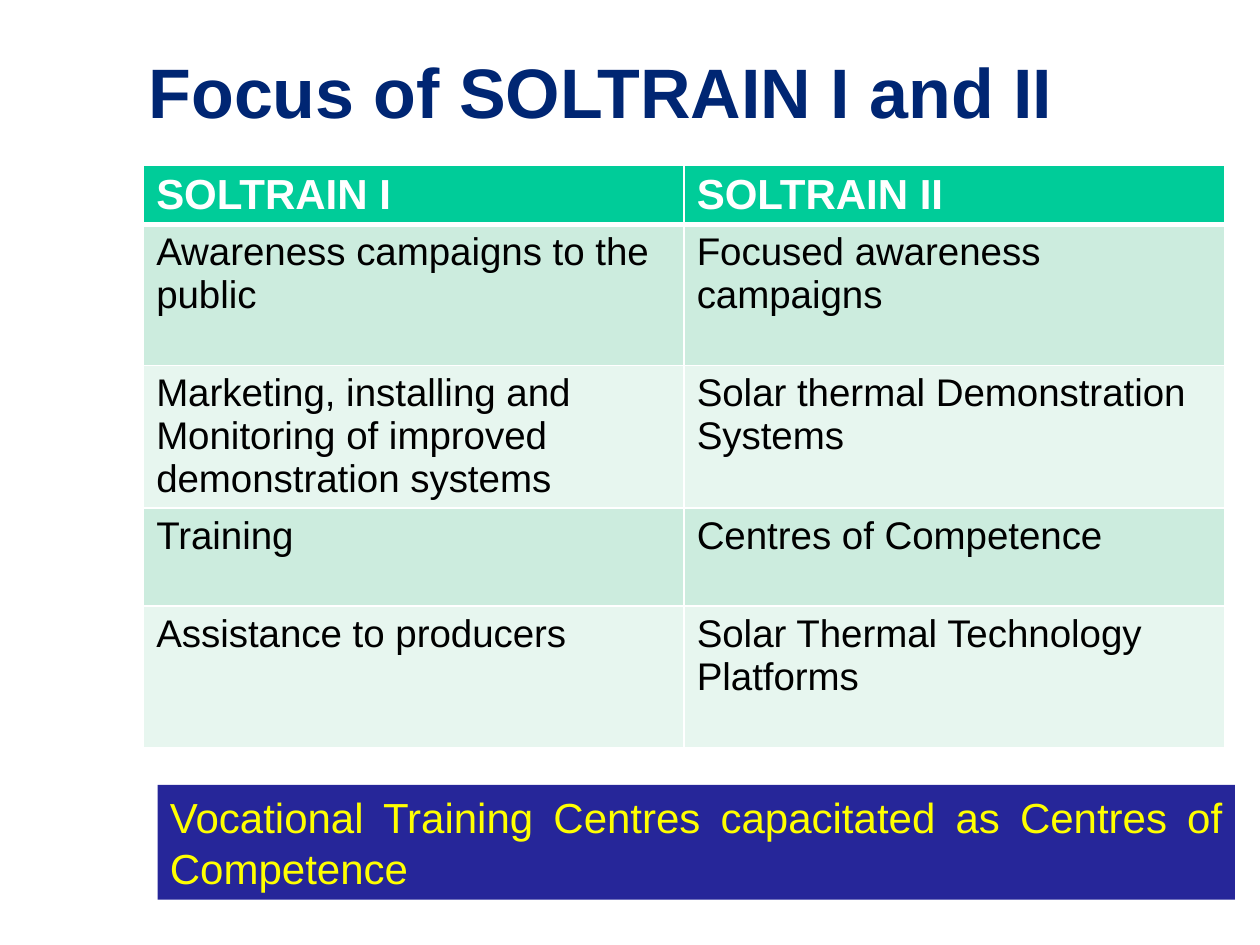
from dataclasses import dataclass

from lxml.etree import SubElement
from pptx import Presentation
from pptx.dml.color import RGBColor
from pptx.enum.shapes import MSO_SHAPE
from pptx.enum.text import MSO_ANCHOR, PP_ALIGN
from pptx.oxml.ns import qn
from pptx.util import Inches, Pt


@dataclass(frozen=True)
class Theme:
    face: str = "Arial"
    navy: str = "002673"
    head: str = "00CC99"
    bands: tuple = ("CCECDE", "E7F6EF")
    white: str = "FFFFFF"
    black: str = "000000"
    box: str = "262699"
    yellow: str = "FFFF00"
    title_size: int = 40
    head_size: int = 24
    body_size: int = 22


theme = Theme()


def write(frame, text, size, color, bold=False, align=PP_ALIGN.LEFT):
    frame.text = text
    frame.word_wrap = True
    para = frame.paragraphs[0]
    para.alignment = align
    font = para.runs[0].font
    font.name = theme.face
    font.size = Pt(size)
    font.bold = bold
    font.color.rgb = RGBColor.from_string(color)


def paint(cell, color, base):
    """Fill a cell and rule its four sides, the bottom one base points wide."""
    props = cell._tc.get_or_add_tcPr()
    for side, width in (("L", 1), ("R", 1), ("T", 1), ("B", base)):
        line = SubElement(props, qn(f"a:ln{side}"), w=str(Pt(width)))
        fill = SubElement(line, qn("a:solidFill"))
        SubElement(fill, qn("a:srgbClr"), val=theme.white)
    cell.fill.solid()
    cell.fill.fore_color.rgb = RGBColor.from_string(color)


deck = Presentation()
deck.slide_width = Inches(10)
deck.slide_height = Inches(7.5)
slide = deck.slides.add_slide(deck.slide_layouts[5])

# Title
title = slide.shapes.title
title.left, title.top = Inches(1.08), Inches(0.28)
title.width, title.height = Inches(8.5), Inches(0.87)
title.text_frame.vertical_anchor = MSO_ANCHOR.MIDDLE
write(title.text_frame, "Focus of SOLTRAIN I and II",
      theme.title_size, theme.navy, bold=True)

# Comparison of the two phases
rows = [
    (0.46, "SOLTRAIN I", "SOLTRAIN II"),
    (1.12, "Awareness campaigns to the public", "Focused awareness campaigns"),
    (1.13, "Marketing, installing and Monitoring of improved demonstration systems",
     "Solar thermal Demonstration Systems"),
    (0.78, "Training", "Centres of Competence"),
    (1.12, "Assistance to producers", "Solar Thermal Technology Platforms"),
]
total = sum(row[0] for row in rows)
table = slide.shapes.add_table(len(rows), 2, Inches(1.14), Inches(1.31),
                               Inches(8.58), Inches(total)).table
for r, (height, *texts) in enumerate(rows):
    table.rows[r].height = Inches(height)
    for c, text in enumerate(texts):
        cell = table.cell(r, c)
        if r == 0:
            paint(cell, theme.head, 3)
            write(cell.text_frame, text, theme.head_size, theme.white, bold=True)
        else:
            paint(cell, theme.bands[(r - 1) % 2], 1)
            write(cell.text_frame, text, theme.body_size, theme.black)

# Closing message
box = slide.shapes.add_shape(MSO_SHAPE.RECTANGLE, Inches(1.25), Inches(6.23),
                             Inches(8.55), Inches(0.91))
box.shadow.inherit = False
box.fill.solid()
box.fill.fore_color.rgb = RGBColor.from_string(theme.box)
box.line.fill.background()
write(box.text_frame,
      "Vocational Training Centres capacitated as Centres of Competence",
      theme.head_size, theme.yellow, align=PP_ALIGN.JUSTIFY)

deck.save("out.pptx")
